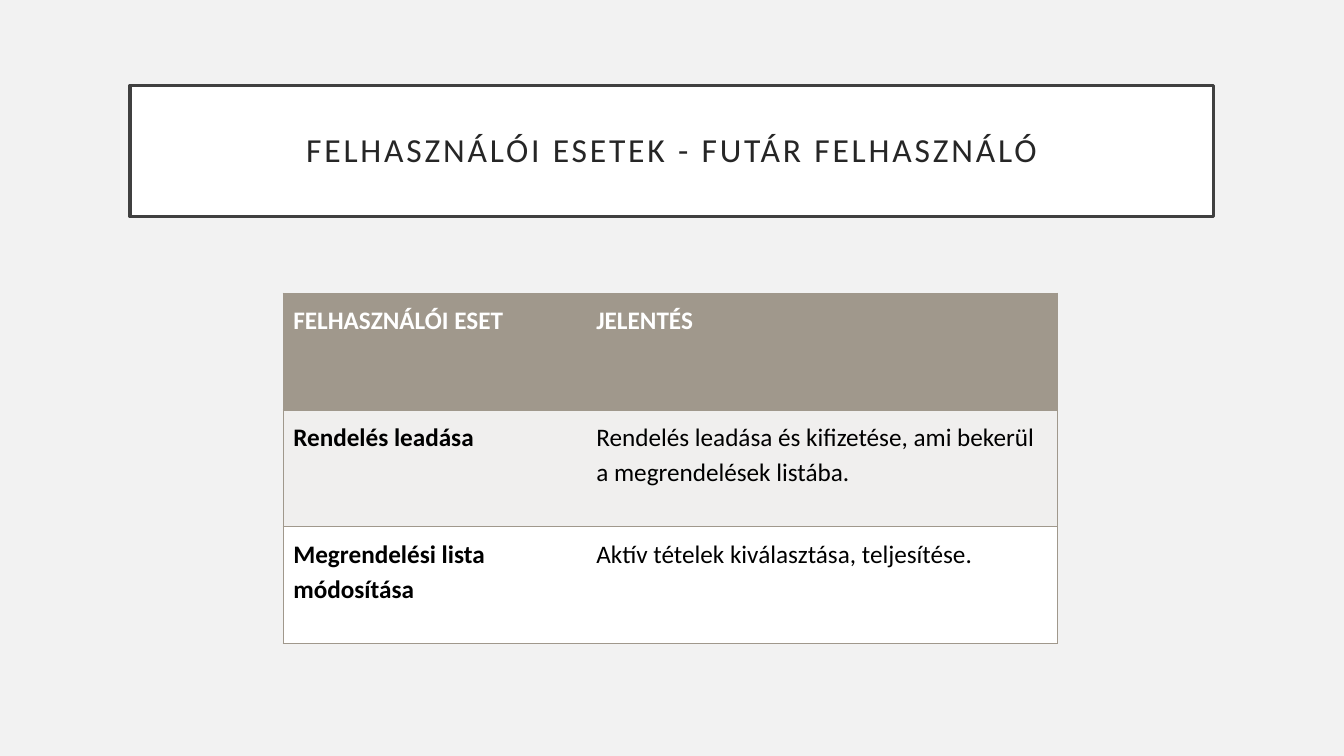
"""Build the slide of use cases for the courier user."""
from lxml import etree
from pptx import Presentation
from pptx.dml.color import RGBColor
from pptx.enum.shapes import MSO_SHAPE
from pptx.enum.text import MSO_ANCHOR, PP_ALIGN
from pptx.oxml.ns import qn
from pptx.util import Pt

RECTANGLE = MSO_SHAPE.RECTANGLE
MIDDLE = MSO_ANCHOR.MIDDLE
CENTER = PP_ALIGN.CENTER

BACKGROUND = RGBColor(0xF2, 0xF2, 0xF2)
WHITE = RGBColor(0xFF, 0xFF, 0xFF)
BLACK = RGBColor(0x00, 0x00, 0x00)
FRAME = RGBColor(0x40, 0x40, 0x40)
TITLE_TEXT = RGBColor(0x26, 0x26, 0x26)
TAUPE = RGBColor(0xA0, 0x98, 0x8C)
BAND = RGBColor(0xF0, 0xEF, 0xEE)

USE_CASES = [
    ("FELHASZNÁLÓI ESET", "JELENTÉS"),
    ("Rendelés leadása",
     "Rendelés leadása és kifizetése, ami bekerül a megrendelések listába."),
    ("Megrendelési lista módosítása", "Aktív tételek kiválasztása, teljesítése."),
]
ROW_FILLS = [TAUPE, BAND, WHITE]


class SlideBuilder:
    """Hold the style and the current slide."""

    font_name = "Calibri"

    def __init__(self, slide):
        self.slide = slide
        slide.background.fill.solid()
        slide.background.fill.fore_color.rgb = BACKGROUND

    def add_text(self, paragraph, text, size, color, bold=False, spacing=1.0):
        """Fill a paragraph with one styled run and return the run."""
        run = paragraph.add_run()
        run.text = text
        paragraph.line_spacing = spacing
        font = paragraph.font
        font.name, font.size, font.bold = self.font_name, Pt(size), bold
        font.color.rgb = color
        return run

    def title(self, text, left, top, width, height):
        """Add the framed title with wide letter spacing."""
        shape = self.slide.shapes.add_shape(
            RECTANGLE, Pt(left), Pt(top), Pt(width), Pt(height))
        shape.shadow.inherit = False
        shape.fill.solid()
        shape.fill.fore_color.rgb = WHITE
        shape.line.color.rgb = FRAME
        shape.line.width = Pt(2.5)
        frame = shape.text_frame
        frame.word_wrap = True
        frame.vertical_anchor = MIDDLE
        frame.margin_left = frame.margin_right = Pt(14.4)
        frame.margin_top = frame.margin_bottom = Pt(14.4)
        paragraph = frame.paragraphs[0]
        paragraph.alignment = CENTER
        run = self.add_text(paragraph, text, 24, TITLE_TEXT, spacing=0.9)
        run.font._element.set("spc", "200")

    def border(self, cell, side, visible):
        """Draw or hide one side of a cell."""
        line = etree.SubElement(
            cell._tc.get_or_add_tcPr(), qn(f"a:ln{side}"), w=str(Pt(1)))
        if visible:
            fill = etree.SubElement(line, qn("a:solidFill"))
            etree.SubElement(fill, qn("a:srgbClr"), val=str(TAUPE))
        else:
            etree.SubElement(line, qn("a:noFill"))

    def table(self, rows, fills, left, top, column_widths, row_height):
        """Add a table with a header row and horizontal rules."""
        table = self.slide.shapes.add_table(
            len(rows), len(column_widths), Pt(left), Pt(top),
            Pt(sum(column_widths)), Pt(row_height * len(rows))).table
        for column, width in zip(table.columns, column_widths):
            column.width = Pt(width)
        last = len(column_widths) - 1
        for row_index, (texts, fill) in enumerate(zip(rows, fills)):
            table.rows[row_index].height = Pt(row_height)
            for column_index, text in enumerate(texts):
                cell = table.cell(row_index, column_index)
                cell.margin_left = cell.margin_right = Pt(7.2)
                cell.margin_top = cell.margin_bottom = Pt(5.76)
                self.border(cell, "L", column_index == 0)
                self.border(cell, "R", column_index == last)
                self.border(cell, "T", True)
                self.border(cell, "B", True)
                cell.fill.solid()
                cell.fill.fore_color.rgb = fill
                header = row_index == 0
                self.add_text(cell.text_frame.paragraphs[0], text, 18,
                              WHITE if header else BLACK,
                              bold=header or column_index == 0, spacing=1.15)


def main():
    """Assemble the slide and save it."""
    presentation = Presentation()
    presentation.slide_width, presentation.slide_height = Pt(960), Pt(540)
    builder = SlideBuilder(
        presentation.slides.add_slide(presentation.slide_layouts[6]))
    builder.title("FELHASZNÁLÓI ESETEK - FUTÁR FELHASZNÁLÓ", 92.88, 61.2, 774, 93.6)
    builder.table(USE_CASES, ROW_FILLS, 202.3, 209.5, [216.5, 336.7], 83.3)
    presentation.save("out.pptx")


if __name__ == "__main__":
    main()
